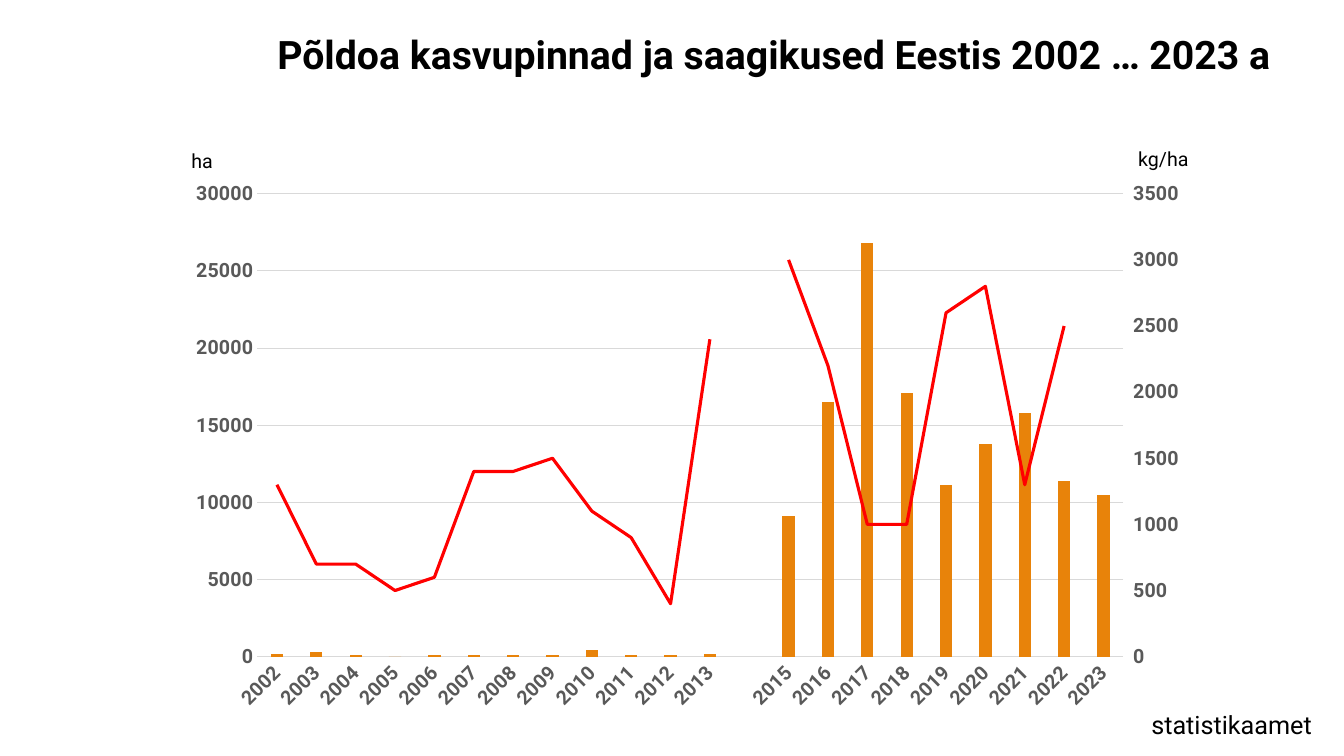
from copy import deepcopy
from dataclasses import dataclass

from lxml import etree
from pptx import Presentation
from pptx import util as u
from pptx.chart import data as chart_data
from pptx.dml import color
from pptx.enum import chart as ch
from pptx.enum import text as te
from pptx.oxml import ns, parse_xml

PX = 9144  # EMU per px, 100 px to the inch


@dataclass(frozen=True)
class Theme:
    font: str = "Roboto"
    ink: str = "000000"
    axis_ink: str = "595959"
    grid: str = "D9D9D9"
    area: str = "E8830A"
    crop_yield: str = "FF0000"
    title_pt: int = 28
    source_pt: int = 18
    label_pt: int = 14


@dataclass(frozen=True)
class Label:
    text: str
    box: tuple[int, int, int, int]
    size: int
    wrap: bool = False
    bold: bool = False


@dataclass(frozen=True)
class Scale:
    top: int
    step: int


THEME = Theme()
TITLE = Label("Põldoa kasvupinnad ja saagikused Eestis 2002 … 2023 a",
              (265, 25, 1028, 57), THEME.title_pt, wrap=True, bold=True)
LABELS = [
    Label("ha", (180, 143, 42, 34), THEME.label_pt),
    Label("kg/ha", (1119, 141, 79, 34), THEME.label_pt, wrap=True),
    Label("statistikaamet", (1132, 699, 181, 40), THEME.source_pt),
]
CHART_BOX = (169, 174, 1014, 554)
PLOT_AREA = {"x": 0.085, "y": 0.033, "w": 0.847, "h": 0.829}
AREA_SCALE = Scale(30000, 5000)
YIELD_SCALE = Scale(3500, 500)
YEARS = ["" if year == 2014 else str(year) for year in range(2002, 2024)]
AREA = [200, 300, 100, 0, 100, 100, 100, 100, 400, 100, 100, 200, None,
        9100, 16500, 26800, 17100, 11100, 13800, 15800, 11400, 10500]
YIELD = [1300, 700, 700, 500, 600, 1400, 1400, 1500, 1100, 900, 400, 2400, None,
         3000, 2200, 1000, 1000, 2600, 2800, 1300, 2500, None]


def rgb(value: str) -> color.RGBColor:
    return color.RGBColor.from_string(value)


def emu(box: tuple[int, int, int, int]) -> list[u.Emu]:
    return [u.Emu(px * PX) for px in box]


def style_font(font, size: int, ink: str, bold: bool) -> None:
    formats = {"name": THEME.font, "size": u.Pt(size), "bold": bold}
    for key, value in formats.items():
        setattr(font, key, value)
    font.color.rgb = rgb(ink)


def write_label(shape, label: Label) -> None:
    for side, value in zip(("left", "top", "width", "height"), emu(label.box)):
        setattr(shape, side, value)
    frame = shape.text_frame
    frame.text = label.text
    formats = {"word_wrap": label.wrap, "auto_size": te.MSO_AUTO_SIZE.SHAPE_TO_FIT_TEXT,
               "vertical_anchor": te.MSO_ANCHOR.TOP}
    for key, value in formats.items():
        setattr(frame, key, value)
    paragraph = frame.paragraphs[0]
    paragraph.alignment = te.PP_ALIGN.LEFT
    style_font(paragraph.runs[0].font, label.size, THEME.ink, label.bold)


def set_val(parent, tag: str, value) -> None:
    parent.find(f".//{ns.qn(tag)}").set("val", str(value))


def style_axes(chart) -> None:
    years, area = chart.category_axis, chart.value_axis
    for axis in (years, area):
        axis.major_tick_mark = axis.minor_tick_mark = ch.XL_TICK_MARK.NONE
        style_font(axis.tick_labels.font, THEME.label_pt, THEME.axis_ink, True)
    body = years._element.find(f"{ns.qn('c:txPr')}/{ns.qn('a:bodyPr')}")
    body.set("rot", "-2700000")  # years run up at 45 degrees
    formats = {"minimum_scale": 0, "maximum_scale": AREA_SCALE.top,
               "major_unit": AREA_SCALE.step, "has_major_gridlines": True}
    for key, value in formats.items():
        setattr(area, key, value)
    area.format.line.fill.background()
    for line in (years.format.line, area.major_gridlines.format.line):
        line.color.rgb = rgb(THEME.grid)
        line.width = u.Pt(0.75)


def move_yield_to_right_axis(chart) -> None:
    """Turn the second column series into a line on its own axis pair."""
    bars = chart.plots[0]._element
    plot_area = bars.getparent()
    yield_series = bars.findall(ns.qn("c:ser"))[1]
    for bar_only in yield_series.findall(ns.qn("c:invertIfNegative")):
        yield_series.remove(bar_only)
    line_plot = parse_xml(
        f'<c:lineChart {ns.nsdecls("c")}><c:grouping val="standard"/>'
        '<c:varyColors val="0"/><c:marker val="1"/>'
        '<c:axId val="50010"/><c:axId val="50020"/></c:lineChart>')
    line_plot.insert(2, yield_series)
    bars.addnext(line_plot)

    hidden_years = deepcopy(chart.category_axis._element)
    right = deepcopy(chart.value_axis._element)
    chart.value_axis._element.addnext(right)
    right.addnext(hidden_years)
    for axis, own, other in ((hidden_years, 50010, 50020), (right, 50020, 50010)):
        set_val(axis, "c:axId", own)
        set_val(axis, "c:crossAx", other)
    set_val(hidden_years, "c:delete", 1)
    for gridlines in right.findall(ns.qn("c:majorGridlines")):
        right.remove(gridlines)
    for tag, value in {"c:axPos": "r", "c:crosses": "max", "c:majorTickMark": "out",
                       "c:max": YIELD_SCALE.top, "c:majorUnit": YIELD_SCALE.step}.items():
        set_val(right, tag, value)

    # Fixed inner plot area
    for old in plot_area.findall(ns.qn("c:layout")):
        plot_area.remove(old)
    layout = parse_xml(f'<c:layout {ns.nsdecls("c")}><c:manualLayout/></c:layout>')
    places = {"layoutTarget": "inner", "xMode": "edge", "yMode": "edge", **PLOT_AREA}
    for tag, value in places.items():
        etree.SubElement(layout[0], ns.qn(f"c:{tag}")).set("val", str(value))
    plot_area.insert(0, layout)


def add_crop_chart(slide) -> None:
    crops = chart_data.CategoryChartData()
    crops.categories = YEARS
    crops.add_series("Series 1", AREA)
    crops.add_series("Series 2", YIELD)
    chart = slide.shapes.add_chart(
        ch.XL_CHART_TYPE.COLUMN_CLUSTERED, *emu(CHART_BOX), crops).chart
    chart.has_title = chart.has_legend = False
    style_font(chart.font, THEME.label_pt, THEME.ink, True)
    style_axes(chart)
    move_yield_to_right_axis(chart)

    area_plot, yield_plot = chart.plots
    for key, value in {"gap_width": 219, "overlap": -27, "vary_by_categories": False}.items():
        setattr(area_plot, key, value)
    area_fill = area_plot.series[0].format.fill
    area_fill.solid()
    area_fill.fore_color.rgb = rgb(THEME.area)
    yield_line = yield_plot.series[0]
    yield_line.smooth = False
    yield_line.marker.style = ch.XL_MARKER_STYLE.NONE
    yield_line.format.line.color.rgb = rgb(THEME.crop_yield)
    yield_line.format.line.width = u.Pt(2.25)


def main() -> None:
    deck = Presentation()
    deck.slide_width, deck.slide_height = u.Inches(13.33), u.Inches(7.5)
    slide = deck.slides.add_slide(deck.slide_layouts[5])
    write_label(slide.shapes.title, TITLE)
    add_crop_chart(slide)
    for label in LABELS:
        write_label(slide.shapes.add_textbox(*emu(label.box)), label)
    deck.save("out.pptx")


if __name__ == "__main__":
    main()
